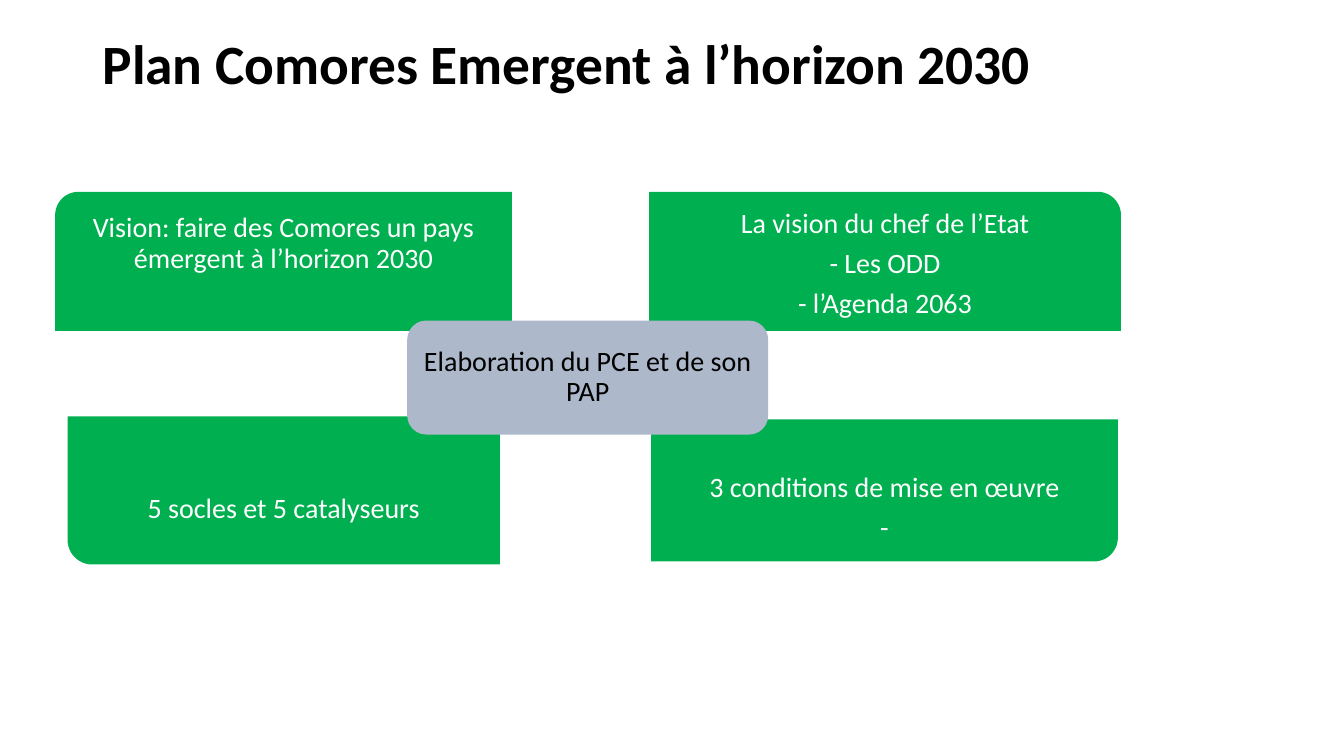
"""Build the slide on the Plan Comores Emergent: four themes around one central plan."""
from pptx import Presentation
from pptx import util as u
from pptx.dml.color import RGBColor
from pptx.enum import shapes, text

GREEN = RGBColor(0x00, 0xB0, 0x50)
GREY = RGBColor(0xAD, 0xB9, 0xCA)
WHITE = RGBColor(0xFF, 0xFF, 0xFF)
BLACK = RGBColor(0x00, 0x00, 0x00)

TITLE = "Plan Comores Emergent à l’horizon 2030"
TITLE_BOX = (66.2, 28.8, 828, 37.4)
HUB = "Elaboration du PCE et de son PAP"
HUB_BOX = (290.9, 229, 257.8, 81.4)
THEMES = [
    {"lines": ["Vision: faire des Comores un pays émergent à l’horizon 2030"],
     "box": (39.4, 137, 326.2, 99.4), "turn": 270, "text_share": 0.75},
    {"lines": ["La vision du chef de l’Etat", "- Les ODD", "- l’Agenda 2063"],
     "box": (463.7, 137, 337, 99.4), "turn": 0, "text_share": 1.04},
    {"lines": ["5 socles et 5 catalyseurs"],
     "box": (48.2, 297.4, 308.9, 105.8), "turn": 180, "text_share": 0.75},
    {"lines": ["3 conditions de mise en œuvre", "-"],
     "box": (465.1, 299.5, 333.4, 101.5), "turn": 90, "text_share": 0.75},
]
TITLE_FONT = {"name": "Calibri", "size": u.Pt(39.6), "bold": True}
BODY_FONT = {"name": "Calibri", "size": u.Pt(20)}
CENTRED = {"alignment": text.PP_ALIGN.CENTER, "space_after": u.Pt(7)}


def points(box):
    return [u.Pt(length) for length in box]


def add_panel(slide, preset, box, fill, turn=0):
    left, top, width, height = box
    if turn % 180:
        left, top = left + (width - height) / 2, top + (height - width) / 2
        width, height = height, width
    panel = slide.shapes.add_shape(preset, *points((left, top, width, height)))
    panel.rotation = turn
    panel.shadow.inherit = False
    panel.fill.solid()
    panel.fill.fore_color.rgb = fill
    panel.line.fill.background()
    return panel


def write(holder, lines, color, font, layout, inset):
    frame = holder.text_frame
    frame.word_wrap = True
    frame.vertical_anchor = text.MSO_ANCHOR.MIDDLE
    for side, margin in zip(("left", "top", "right", "bottom"), inset):
        setattr(frame, f"margin_{side}", u.Pt(margin))
    for index, line in enumerate(lines):
        paragraph = frame.add_paragraph() if index else frame.paragraphs[0]
        paragraph.line_spacing = 0.9
        for name, value in layout.items():
            setattr(paragraph, name, value)
        run = paragraph.add_run()
        run.text = line
        run.font.color.rgb = color
        for name, value in font.items():
            setattr(run.font, name, value)


def main():
    deck = Presentation()
    deck.slide_width, deck.slide_height = u.Pt(960), u.Pt(540)
    slide = deck.slides.add_slide(deck.slide_layouts[6])

    title = slide.shapes.add_textbox(*points(TITLE_BOX))
    write(title, [TITLE], BLACK, TITLE_FONT, {"alignment": text.PP_ALIGN.LEFT}, (7.2, 3.6, 7.2, 3.6))

    for theme in THEMES:
        left, top, width, height = theme["box"]
        add_panel(slide, shapes.MSO_SHAPE.ROUND_1_RECTANGLE, theme["box"], GREEN, theme["turn"])
        label_height = height * theme["text_share"]
        rounded_below = theme["turn"] in (90, 180)
        label_top = top + height - label_height if rounded_below else top
        label = slide.shapes.add_textbox(*points((left, label_top, width, label_height)))
        write(label, theme["lines"], WHITE, BODY_FONT, CENTRED, [11.5] * 4)

    hub = add_panel(slide, shapes.MSO_SHAPE.ROUNDED_RECTANGLE, HUB_BOX, GREY)
    write(hub, [HUB], BLACK, BODY_FONT, CENTRED, [5.8] * 4)
    deck.save("out.pptx")


if __name__ == "__main__":
    main()
